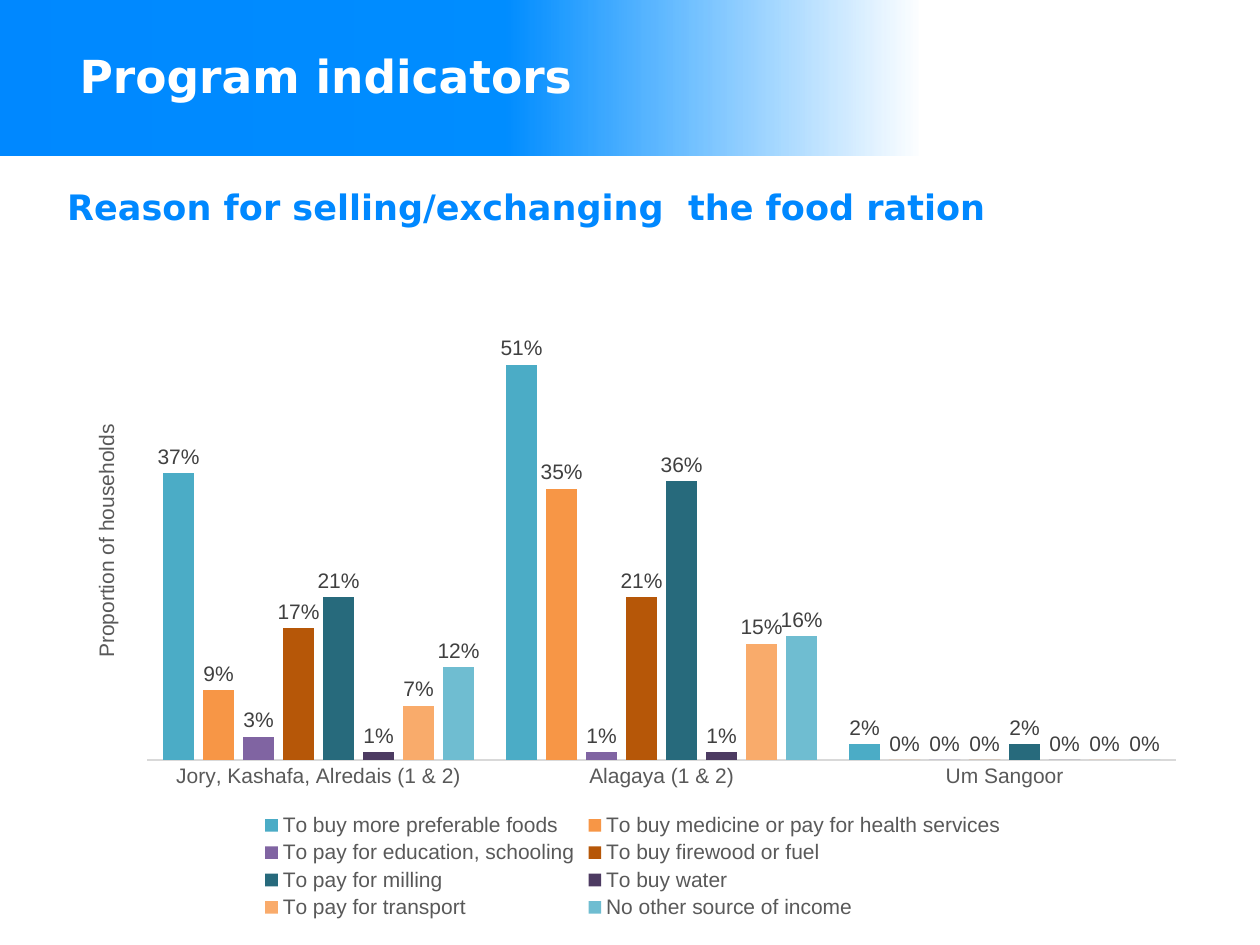
from dataclasses import dataclass

from lxml import etree
from pptx import Presentation
from pptx import util as u
from pptx.chart import data as cd
from pptx.dml.color import RGBColor
from pptx.enum import chart as ch, shapes, text
from pptx.oxml import parse_xml
from pptx.oxml.ns import nsdecls, qn

SANS = "DejaVu Sans"
ARIAL = "Arial"
BLUE = "0088FF"
GREY = "595959"


@dataclass
class Box:
    left: float
    top: float
    width: float
    height: float

    def emu(self) -> tuple:
        return tuple(u.Pt(v) for v in (self.left, self.top, self.width, self.height))


@dataclass
class Stop:
    pos: int
    color: str
    alpha: int = 100


@dataclass
class Reason:
    name: str
    values: tuple
    color: str


CAMPS = ["Jory, Kashafa, Alredais (1 & 2)", "Alagaya (1 & 2)", "Um Sangoor"]
REASONS = [
    Reason("To buy more preferable foods", (0.37, 0.51, 0.02), "4BACC6"),
    Reason("To buy medicine or pay for health services", (0.09, 0.35, 0), "F79646"),
    Reason("To pay for education, schooling", (0.03, 0.01, 0), "8064A2"),
    Reason("To buy firewood or fuel", (0.17, 0.21, 0), "B65708"),
    Reason("To pay for milling", (0.21, 0.36, 0.02), "276A7C"),
    Reason("To buy water", (0.01, 0.01, 0), "4D3B62"),
    Reason("To pay for transport", (0.07, 0.15, 0), "F9AB6B"),
    Reason("No other source of income", (0.12, 0.16, 0), "6FBDD1"),
]
BANNER = [Stop(0, BLUE), Stop(40, "008DFF"), Stop(73, "0091FF", 0)]


def rgb(value: str) -> RGBColor:
    return RGBColor.from_string(value)


def style(font, name: str, size: float, color: str, bold: bool = False) -> None:
    font.name = name
    font.size = u.Pt(size)
    font.bold = bold
    font.color.rgb = rgb(color)


def add_banner(s, box: Box, stops: list[Stop]) -> None:
    sp = s.shapes.add_shape(shapes.MSO_SHAPE.RECTANGLE, *box.emu())
    sp.shadow.inherit = False
    sp.line.fill.background()
    grad = parse_xml(f'<a:gradFill {nsdecls("a")} rotWithShape="1"><a:gsLst/><a:lin ang="0"/></a:gradFill>')
    for stop in stops:
        gs = etree.SubElement(grad[0], qn("a:gs"), pos=str(stop.pos * 1000))
        clr = etree.SubElement(gs, qn("a:srgbClr"), val=stop.color)
        etree.SubElement(clr, qn("a:alpha"), val=str(stop.alpha * 1000))
    sp._element.spPr.find(qn("a:prstGeom")).addnext(grad)


def add_text(s, box: Box, words: str, size: float, color: str, anchor, insets: tuple) -> None:
    tf = s.shapes.add_textbox(*box.emu()).text_frame
    tf.word_wrap = True
    tf.vertical_anchor = anchor
    tf.margin_left, tf.margin_top, tf.margin_right, tf.margin_bottom = map(u.Pt, insets)
    tf.text = words
    style(tf.paragraphs[0].runs[0].font, SANS, size, color, True)


def add_reasons_chart(s, box: Box, camps: list[str], reasons: list[Reason]) -> None:
    data = cd.CategoryChartData(number_format="0%")
    data.categories = camps
    for reason in reasons:
        data.add_series(reason.name, reason.values)
    chart = s.shapes.add_chart(ch.XL_CHART_TYPE.COLUMN_CLUSTERED, *box.emu(), data).chart
    style(chart.font, ARIAL, 12, "000000")
    chart.has_title = False
    chart.has_legend = True
    chart.legend.position = ch.XL_LEGEND_POSITION.BOTTOM
    chart.legend.include_in_layout = False
    style(chart.legend.font, ARIAL, 12, GREY)

    cat = chart.category_axis
    cat.major_tick_mark = ch.XL_TICK_MARK.NONE
    cat.format.line.color.rgb = rgb("D9D9D9")
    cat.format.line.width = u.Pt(0.75)
    style(cat.tick_labels.font, ARIAL, 12, GREY)

    val = chart.value_axis
    val.visible = False
    val.has_major_gridlines = False
    val.minimum_scale = 0
    val.tick_labels.number_format = "0%"
    val.tick_labels.number_format_is_linked = False
    tf = val.axis_title.text_frame
    tf.text = "Proportion of households"
    style(tf.paragraphs[0].runs[0].font, ARIAL, 12, GREY)

    plot = chart.plots[0]
    plot.vary_by_categories = False
    plot.gap_width = 100
    plot.overlap = -27
    for series, reason in zip(plot.series, reasons):
        series.invert_if_negative = False
        series.format.fill.solid()
        series.format.fill.fore_color.rgb = rgb(reason.color)
        labels = series.data_labels
        labels.show_value = True
        labels.position = ch.XL_LABEL_POSITION.OUTSIDE_END
        labels.number_format = "0%"
        labels.number_format_is_linked = False
        style(labels.font, ARIAL, 12, "404040")


def main() -> None:
    prs = Presentation()
    prs.slide_width, prs.slide_height = u.Pt(720), u.Pt(540)
    s = prs.slides.add_slide(prs.slide_layouts[6])
    add_banner(s, Box(0, 0, 720, 88.8), BANNER)
    add_text(s, Box(38.4, 105.8, 646.6, 33), "Reason for selling/exchanging  the food ration",
             20, BLUE, text.MSO_ANCHOR.TOP, (0, 0, 0, 0))
    add_text(s, Box(38.4, 9.4, 466.6, 72.7), "Program indicators",
             26, "FFFFFF", text.MSO_ANCHOR.MIDDLE, (7.2, 0, 7.2, 5))
    add_reasons_chart(s, Box(38.4, 161.3, 646.6, 366.5), CAMPS, REASONS)
    prs.save("out.pptx")


if __name__ == "__main__":
    main()
